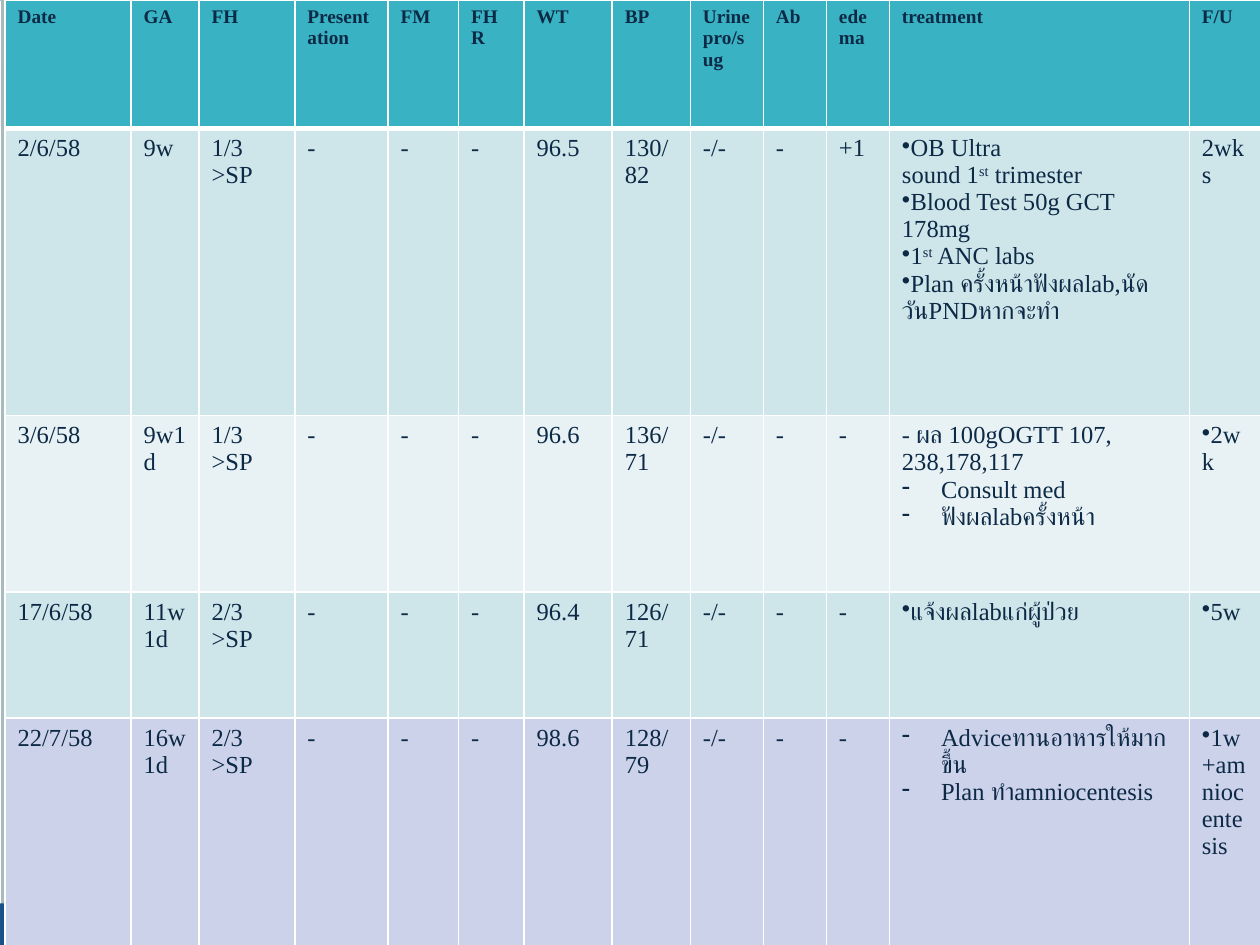
from lxml.etree import SubElement
from pptx import Presentation
from pptx.dml.color import RGBColor
from pptx.enum.shapes import MSO_SHAPE as Shape
from pptx.oxml.ns import qn
from pptx.util import Inches, Pt

FONT = "Times New Roman"
INK = RGBColor(0x0C, 0x29, 0x46)
WHITE = RGBColor(0xFF, 0xFF, 0xFF)
GREY = RGBColor(0xA8, 0xBA, 0xBC)
NAVY = RGBColor(0x19, 0x52, 0x8B)
TEAL = RGBColor(0x39, 0xB3, 0xC3)
BAND = RGBColor(0xCE, 0xE5, 0xE9)
PALE = RGBColor(0xE8, 0xF2, 0xF5)
LILAC = RGBColor(0xCC, 0xD2, 0xE9)

COLUMN_WIDTHS = [1, 0.54, 0.76, 0.74, 0.56, 0.52, 0.7, 0.62, 0.58, 0.5, 0.5, 2.38, 0.57]
ROW_HEIGHTS = [1.02, 2.28, 1.4, 1, 1.84]
ROW_FILLS = [TEAL, BAND, PALE, BAND, LILAC]

# Cell markup: | parts paragraphs, ^ surrounds superscript,
# a leading • is a bullet and a leading ~ a hanging dash
HEADINGS = ["Date", "GA", "FH", "Presentation", "FM", "FHR", "WT", "BP",
            "Urine pro/sug", "Ab", "edema", "treatment", "F/U"]
VISITS = [
    ["2/6/58", "9w", "1/3\n>SP", "-", "-", "-", "96.5", "130/82", "-/-", "-", "+1",
     "•OB Ultra\nsound 1^st^ trimester|•Blood Test 50g GCT\n178mg|•1^st^ ANC labs"
     "|•Plan ครั้งหน้าฟังผลlab,นัดวันPNDหากจะทำ", "2wks"],
    ["3/6/58", "9w1d", "1/3\n>SP", "-", "-", "-", "96.6", "136/71", "-/-", "-", "-",
     "- ผล 100gOGTT 107,\n238,178,117|~Consult med|~ฟังผลlabครั้งหน้า", "•2wk"],
    ["17/6/58", "11w|1d", "2/3\n>SP", "-", "-", "-", "96.4", "126/71", "-/-", "-", "-",
     "•แจ้งผลlabแก่ผู้ป่วย", "•5w"],
    ["22/7/58", "16w|1d", "2/3\n>SP", "-", "-", "-", "98.6", "128/79", "-/-", "-", "-",
     "~Adviceทานอาหารให้มากขึ้น|~Plan ทำamniocentesis", "•1w+amniocentesis"],
]


def finish(shape, color=None, angle=0):
    """Fill with a colour, or with a white-to-grey gradient."""
    shape.shadow.inherit = False
    shape.line.fill.background()
    if color is not None:
        shape.fill.solid()
        shape.fill.fore_color.rgb = color
        return
    shape.fill.gradient()
    shape.fill.gradient_angle = 360 - angle
    for stop, stop_color in zip(shape.fill.gradient_stops, (WHITE, GREY)):
        stop.color.rgb = stop_color


def add_wedge(slide, corners):
    builder = slide.shapes.build_freeform(*corners[0], scale=Inches(1))
    builder.add_line_segments(corners[1:])
    finish(builder.convert_to_shape(), angle=45)


def add_block(slide, preset, left, top, width, height):
    return slide.shapes.add_shape(
        preset, *(Inches(length) for length in (left, top, width, height)))


def add_backdrop(slide):
    add_wedge(slide, [(9.89, 0.04), (9.92, 1.33), (4.83, 0.81)])
    add_wedge(slide, [(0.03, 0), (0, 1.42), (4.96, 0.82)])
    flap = add_block(slide, Shape.ISOSCELES_TRIANGLE, 0, 0, 10, 0.83)
    flap.rotation = 180
    finish(flap, angle=90)
    finish(add_block(slide, Shape.RECTANGLE, 9.92, 0.02, 0.08, 7.48), GREY)
    finish(add_block(slide, Shape.RECTANGLE, 0.01, 0.01, 0.08, 7.49), GREY)
    finish(add_block(slide, Shape.RECTANGLE, 0, 7.17, 10, 0.33), NAVY)


def set_bullet(paragraph, char, indent):
    properties = paragraph._p.get_or_add_pPr()
    properties.set("marL", str(Inches(indent)))
    properties.set("indent", str(-Inches(indent)))
    SubElement(properties, qn("a:buChar"), char=char)


def write_paragraph(paragraph, markup, size, bold):
    if markup[0] == "•":
        set_bullet(paragraph, "•", 0)
    elif markup[0] == "~":
        set_bullet(paragraph, "-", 0.31)
    pieces = markup.lstrip("•~").split("^")
    paragraph.text = pieces[0]
    for position, piece in enumerate(pieces[1:], 1):
        run = paragraph.add_run()
        run.text = piece
        if position % 2:
            run.font._element.set("baseline", "30000")
    for run in paragraph.runs:
        run.font.name = FONT
        run.font.size = Pt(size)
        run.font.bold = bold
        run.font.color.rgb = INK
        SubElement(run.font._element, qn("a:cs"), typeface=FONT)
    # Line breaks take the text size too
    for line_break in paragraph._p.findall(qn("a:br")):
        SubElement(line_break, qn("a:rPr"), sz=str(size * 100))


def set_borders(cell, top, bottom):
    properties = cell._tc.get_or_add_tcPr()
    for side, width in (("L", 1), ("R", 1), ("T", top), ("B", bottom)):
        border = SubElement(properties, qn(f"a:ln{side}"), w=str(Pt(width)))
        paint = SubElement(border, qn("a:solidFill"))
        SubElement(paint, qn("a:srgbClr"), val=str(WHITE))


def write_cell(cell, markup, row):
    set_borders(cell, top=3 if row == 1 else 1, bottom=3 if row == 0 else 1)
    cell.fill.solid()
    cell.fill.fore_color.rgb = ROW_FILLS[row]
    frame = cell.text_frame
    for number, line in enumerate(markup.split("|")):
        paragraph = frame.add_paragraph() if number else frame.paragraphs[0]
        write_paragraph(paragraph, line, size=14 if row else 11, bold=row == 0)


def add_visit_table(slide):
    records = [HEADINGS] + VISITS
    table = slide.shapes.add_table(
        len(records), len(HEADINGS), Inches(0.04), 0,
        Inches(sum(COLUMN_WIDTHS)), Inches(sum(ROW_HEIGHTS))).table
    for column, width in zip(table.columns, COLUMN_WIDTHS):
        column.width = Inches(width)
    for row, height in zip(table.rows, ROW_HEIGHTS):
        row.height = Inches(height)
    for row, record in enumerate(records):
        for column, markup in enumerate(record):
            write_cell(table.cell(row, column), markup, row)


def main():
    deck = Presentation()
    deck.slide_width, deck.slide_height = Inches(10), Inches(7.5)
    slide = deck.slides.add_slide(deck.slide_layouts[6])
    add_backdrop(slide)
    add_visit_table(slide)
    deck.save("out.pptx")


if __name__ == "__main__":
    main()
